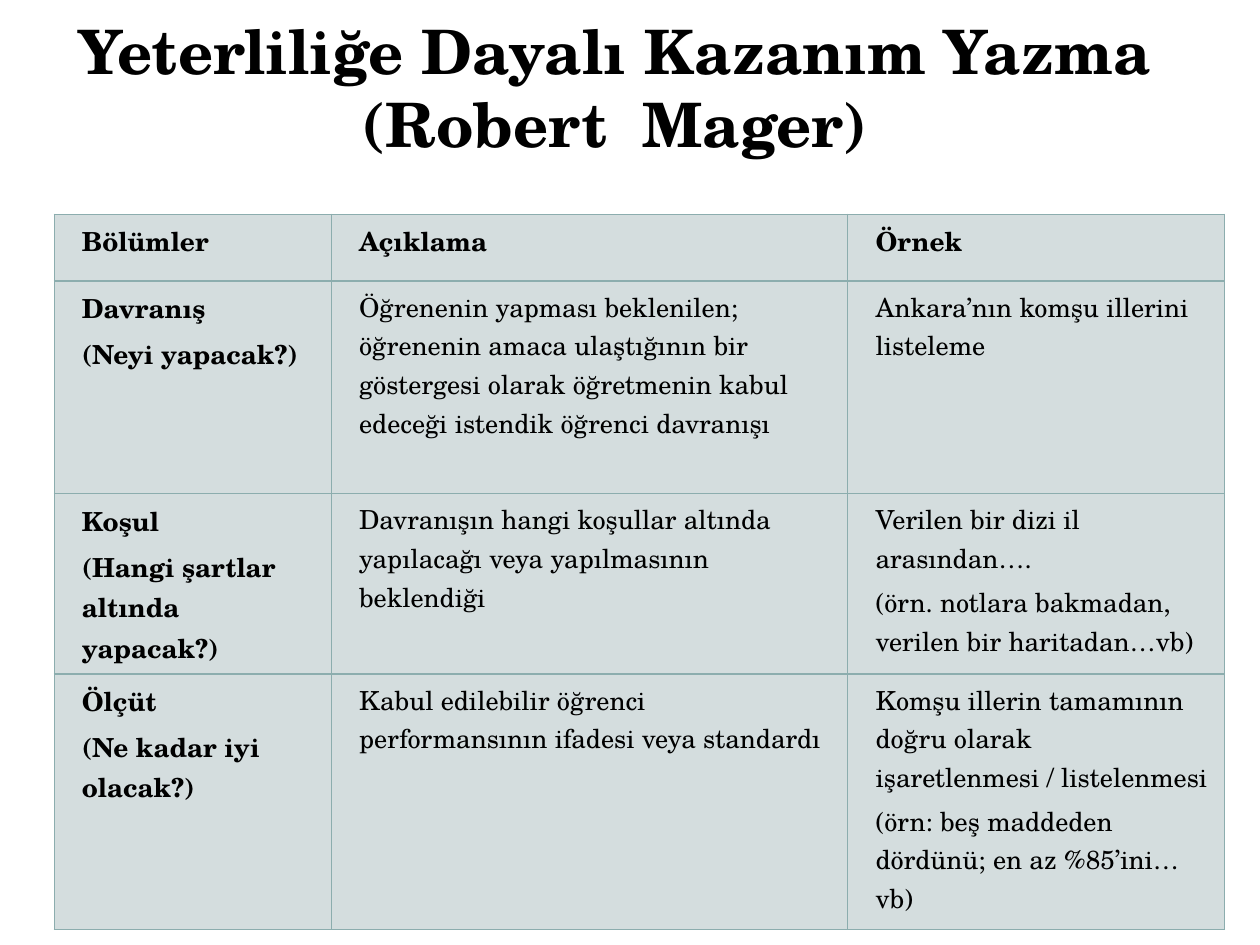
from lxml import etree
from pptx import Presentation
from pptx.dml.color import RGBColor
from pptx.enum.text import MSO_ANCHOR, PP_ALIGN
from pptx.oxml.ns import qn
from pptx.util import Inches, Pt

CENTER = PP_ALIGN.CENTER
MIDDLE = MSO_ANCHOR.MIDDLE
BLACK = RGBColor(0x00, 0x00, 0x00)
CELL_FILL = RGBColor(0xD4, 0xDD, 0xDE)
BORDER = RGBColor(0x8C, 0xAD, 0xAE)
FONT = "TeX Gyre Schola"

TITLE = "Yeterliliğe Dayalı Kazanım Yazma (Robert  Mager)"
COLUMN_WIDTHS = [2.2, 4.1, 2.99]
ROW_HEIGHTS = [0.53, 1.69, 1.43, 2.03]
# Each cell is a list of paragraphs.
ROWS = [
    [["Bölümler"], ["Açıklama"], ["Örnek"]],
    [
        ["Davranış", "(Neyi yapacak?)"],
        ["Öğrenenin yapması beklenilen; öğrenenin amaca ulaştığının bir "
         "göstergesi olarak öğretmenin kabul edeceği istendik öğrenci davranışı"],
        ["Ankara’nın komşu illerini listeleme"],
    ],
    [
        ["Koşul", "(Hangi şartlar altında yapacak?)"],
        ["Davranışın hangi koşullar altında yapılacağı veya yapılmasının beklendiği"],
        ["Verilen bir dizi il arasından….",
         "(örn. notlara bakmadan, verilen bir haritadan…vb)"],
    ],
    [
        ["Ölçüt", "(Ne kadar iyi olacak?)"],
        ["Kabul edilebilir öğrenci performansının ifadesi veya standardı"],
        ["Komşu illerin tamamının doğru olarak işaretlenmesi / listelenmesi",
         "(örn: beş maddeden dördünü; en az %85’ini…vb)"],
    ],
]


def set_attributes(target, values):
    for name, value in values.items():
        setattr(target, name, value)


def add_run(paragraph, text, size, bold):
    run = paragraph.add_run()
    run.text = text
    set_attributes(run.font, {"name": FONT, "size": Pt(size), "bold": bold})
    run.font.color.rgb = BLACK


def add_title(slide):
    shape = slide.shapes.add_textbox(Inches(0.43), Inches(0.06), Inches(8.9), Inches(1.25))
    set_attributes(shape.text_frame, {"word_wrap": True, "vertical_anchor": MIDDLE})
    paragraph = shape.text_frame.paragraphs[0]
    paragraph.alignment = CENTER
    add_run(paragraph, TITLE, 35, True)


def set_borders(cell):
    properties = cell._tc.get_or_add_tcPr()
    for position, side in enumerate(("lnL", "lnR", "lnT", "lnB")):
        line = etree.Element(qn(f"a:{side}"), w=str(Pt(0.75)))
        fill = etree.SubElement(line, qn("a:solidFill"))
        etree.SubElement(fill, qn("a:srgbClr"), val=str(BORDER))
        properties.insert(position, line)


def fill_cell(cell, texts, bold):
    cell.fill.solid()
    cell.fill.fore_color.rgb = CELL_FILL
    set_borders(cell)
    for index, text in enumerate(texts):
        frame = cell.text_frame
        paragraph = frame.add_paragraph() if index else frame.paragraphs[0]
        paragraph.space_before = Pt(3)
        properties = paragraph._p.get_or_add_pPr()
        properties.set("marL", str(Inches(0.12)))
        properties.set("indent", "0")
        add_run(paragraph, text, 15, bold)


def add_objectives_table(slide):
    table = slide.shapes.add_table(
        len(ROWS), len(COLUMN_WIDTHS), Inches(0.43), Inches(1.7),
        Inches(sum(COLUMN_WIDTHS)), Inches(sum(ROW_HEIGHTS))).table
    for column, width in zip(table.columns, COLUMN_WIDTHS):
        column.width = Inches(width)
    for row, height in zip(table.rows, ROW_HEIGHTS):
        row.height = Inches(height)
    for row_index, row in enumerate(ROWS):
        for column_index, texts in enumerate(row):
            bold = row_index == 0 or column_index == 0
            fill_cell(table.cell(row_index, column_index), texts, bold)


def main():
    presentation = Presentation()
    set_attributes(presentation, {"slide_width": Inches(10), "slide_height": Inches(7.5)})
    slide = presentation.slides.add_slide(presentation.slide_layouts[6])
    add_title(slide)
    add_objectives_table(slide)
    presentation.save("out.pptx")


if __name__ == "__main__":
    main()
